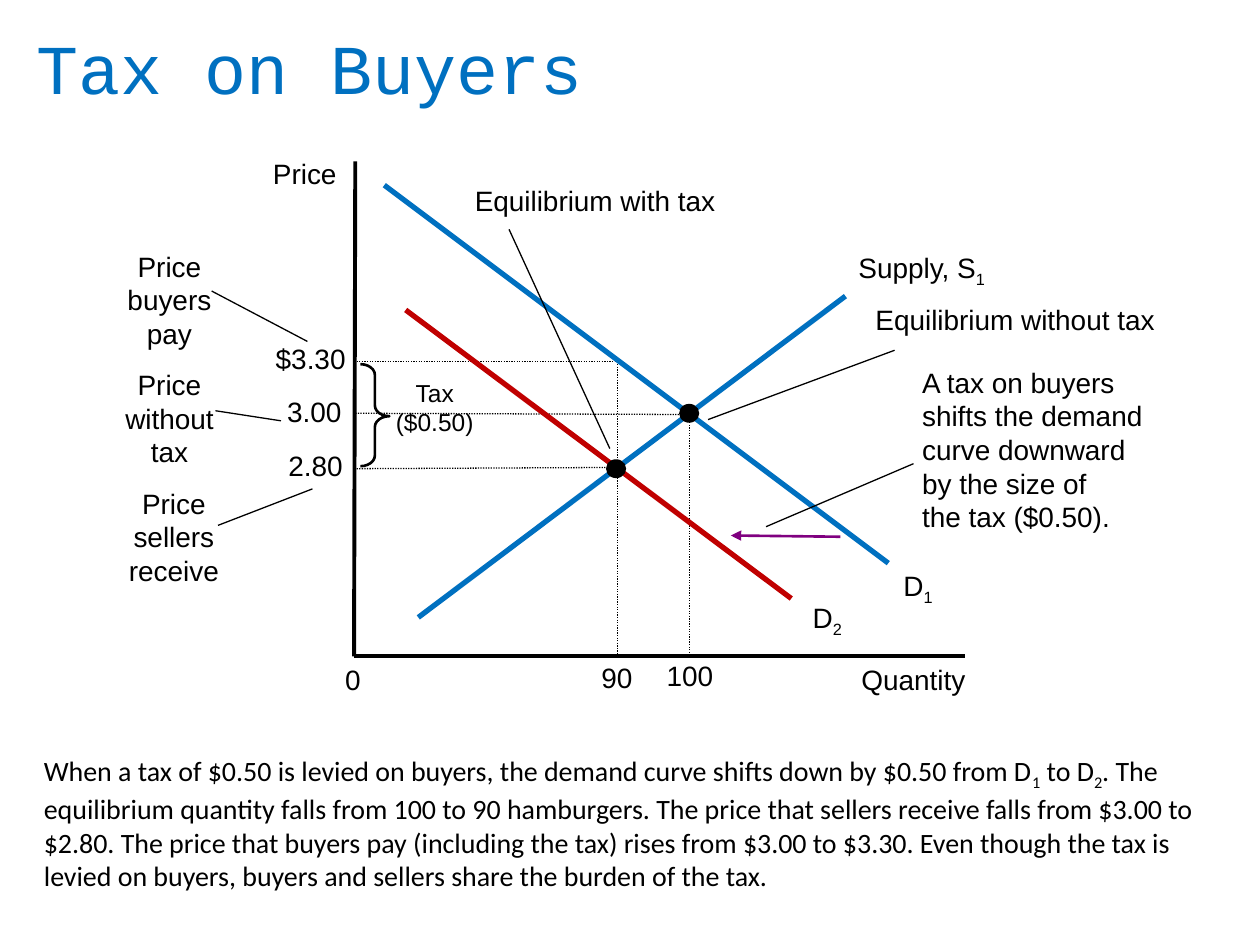
from pptx import Presentation
from pptx.dml.color import RGBColor
from pptx.enum.dml import MSO_LINE
from pptx.enum.shapes import MSO_CONNECTOR, MSO_SHAPE
from pptx.enum.text import MSO_ANCHOR, MSO_AUTO_SIZE, PP_ALIGN
from pptx.oxml.ns import qn
from pptx.util import Cm, Pt
from lxml.etree import SubElement

BLACK, BLUE, RED, PURPLE = "000000", "0070C0", "C00000", "800080"
LEFT, MID, RIGHT = PP_ALIGN.LEFT, PP_ALIGN.CENTER, PP_ALIGN.RIGHT


def inch(*sizes):
    """Turn inches into Cm lengths."""
    return [Cm(size * 2.54) for size in sizes]


def tint(code):
    return RGBColor.from_string(code)


def apply(item, **values):
    for name, value in values.items():
        setattr(item, name, value)


class Board:
    """Holds the base text style and the current slide."""

    def __init__(self, slide, font="Arial", size=16):
        self.slide = slide
        self.shapes = slide.shapes
        self.font = font
        self.size = size

    def fill(self, para, words, font, size, color):
        """Fill a paragraph; a digit after _ is a subscript."""
        first, *rest = words.split("_")
        parts = [(first, False)]
        for part in rest:
            parts += [(part[0], True), (part[1:], False)]
        for part, sub in parts:
            if not part:
                continue
            run = para.add_run()
            run.text = part
            apply(run.font, name=font, size=Pt(size))
            run.font.color.rgb = tint(color)
            if sub:
                run.font._element.set("baseline", "-25000")

    def title(self, words, at):
        head = self.shapes.title
        apply(head, **dict(zip(("left", "top", "width", "height"), inch(*at))))
        frame = head.text_frame
        apply(frame, auto_size=MSO_AUTO_SIZE.NONE, word_wrap=True,
              vertical_anchor=MSO_ANCHOR.TOP, margin_top=Cm(0.45))
        para = frame.paragraphs[0]
        para.alignment = LEFT
        self.fill(para, words, "Courier New", 40, BLUE)

    def text(self, words, at, align=LEFT, wrap=False, font=None, size=None):
        frame = self.shapes.add_textbox(*inch(*at)).text_frame
        apply(frame, word_wrap=wrap, auto_size=MSO_AUTO_SIZE.SHAPE_TO_FIT_TEXT)
        for i, row in enumerate(words.split("\n")):
            para = frame.add_paragraph() if i else frame.paragraphs[0]
            para.alignment = align
            self.fill(para, row, font or self.font, size or self.size, BLACK)

    def line(self, ends, width=0.75, color=BLACK, dash=None, arrow=False):
        link = self.shapes.add_connector(MSO_CONNECTOR.STRAIGHT, *inch(*ends))
        apply(link.line, width=Pt(width), dash_style=dash)
        link.line.color.rgb = tint(color)
        if arrow:
            SubElement(link.line._get_or_add_ln(), qn("a:tailEnd"), type="triangle")
        SubElement(link._element.spPr, qn("a:effectLst"))

    def dot(self, x, y):
        """Mark the point whose centre is x, y."""
        w, h = 0.16, 0.15
        mark = self.shapes.add_shape(
            MSO_SHAPE.OVAL, *inch(x - w / 2, y - h / 2, w, h))
        mark.shadow.inherit = False
        mark.fill.solid()
        mark.fill.fore_color.rgb = tint(BLACK)
        mark.line.fill.background()

    def brace(self, at):
        curl = self.shapes.add_shape(MSO_SHAPE.LEFT_BRACE, *inch(*at))
        curl.shadow.inherit = False
        curl.rotation = 180
        curl.adjustments[0], curl.adjustments[1] = 0.37, 0.49
        curl.fill.background()
        curl.line.width = Pt(1.5)
        curl.line.color.rgb = tint(BLACK)


def main():
    deck = Presentation()
    deck.slide_width, deck.slide_height = inch(10, 7.5)
    board = Board(deck.slides.add_slide(deck.slide_layouts[5]))
    board.title("Tax on Buyers", (0.19, 0.02, 9.81, 0.58))
    row = 0.37

    # Axes
    for ends in ((2.82, 1.28, 2.81, 5.21), (2.81, 5.21, 7.66, 5.21)):
        board.line(ends, 2.25)
    board.text("Price", (1.23, 1.19, 1.54, row), RIGHT, True)
    board.text("Quantity", (4.47, 5.21, 3.29, row), RIGHT, True)
    board.text("0", (2.64, 5.21, 0.33, row))

    # Guides to the axes
    for ends, label, at, align in (
        ((4.9, 2.87, 4.9, 5.2), "90", (4.67, 5.19, 0.45, row), MID),
        ((5.47, 3.31, 5.47, 5.18), "100", (5.19, 5.18, 0.57, row), MID),
        ((2.81, 2.87, 4.91, 2.87), "$3.30", (2.09, 2.66, 0.76, row), LEFT),
        ((2.82, 3.28, 5.45, 3.29), "3.00", (2.18, 3.08, 0.64, row), LEFT),
        ((2.83, 3.72, 4.9, 3.71), "2.80", (2.19, 3.51, 0.64, row), LEFT),
    ):
        board.line(ends, dash=MSO_LINE.ROUND_DOT)
        board.text(label, at, align)

    # Supply and demand
    for ends, color, label, at in (
        ((3.05, 1.47, 7.05, 4.47), BLUE, " D_1", (7, 4.46, 0.51, row)),
        ((3.32, 4.9, 6.71, 2.35), BLUE, "Supply, S_1", (6.7, 1.94, 1.23, row)),
        ((3.22, 2.46, 6.28, 4.75), RED, " D_2", (6.28, 4.72, 0.51, row)),
    ):
        board.line(ends, 3, color)
        board.text(label, at, MID)
    board.line((6.67, 4.26, 5.8, 4.25), 1.5, PURPLE, arrow=True)
    board.dot(5.47, 3.28)
    board.dot(4.89, 3.72)

    # Notes with leader lines
    for ends, label, at, align in (
        ((1.68, 2.31, 2.44, 2.71), "Price\nbuyers\npay",
         (0.91, 1.93, 0.87, 0.91), MID),
        ((1.71, 3.26, 2.23, 3.34), "Price\nwithout\ntax",
         (0.89, 2.87, 0.91, 0.91), MID),
        ((1.73, 4.17, 2.48, 3.88), "Price\nsellers\nreceive",
         (0.92, 3.81, 0.92, 0.91), MID),
        ((6.08, 4.18, 7.25, 3.68),
         "A tax on buyers\nshifts the demand\ncurve downward\n"
         "by the size of\nthe tax ($0.50).", (7.22, 2.85, 1.97, 1.45), LEFT),
        ((5.62, 3.33, 7.1, 2.78), "Equilibrium without tax",
         (6.85, 2.35, 2.44, row), LEFT),
        ((4.04, 1.82, 4.84, 3.56), "Equilibrium with tax",
         (3.67, 1.41, 2.2, row), LEFT),
    ):
        board.line(ends)
        board.text(label, at, align)

    board.brace((2.86, 2.89, 0.23, 0.81))
    board.text("Tax\n($0.50)", (3.04, 2.95, 0.82, 0.57), MID, True, size=14)
    board.text(
        "When a tax of $0.50 is levied on buyers, the demand curve shifts down "
        "by $0.50 from D_1 to D_2. The equilibrium quantity falls from 100 to 90 "
        "hamburgers. The price that sellers receive falls from $3.00 to $2.80. "
        "The price that buyers pay (including the tax) rises from $3.00 to $3.30. "
        "Even though the tax is levied on buyers, buyers and sellers share the "
        "burden of the tax.",
        (0.25, 5.93, 9.53, 1.18), wrap=True, font="Calibri")
    deck.save("out.pptx")


if __name__ == "__main__":
    main()
